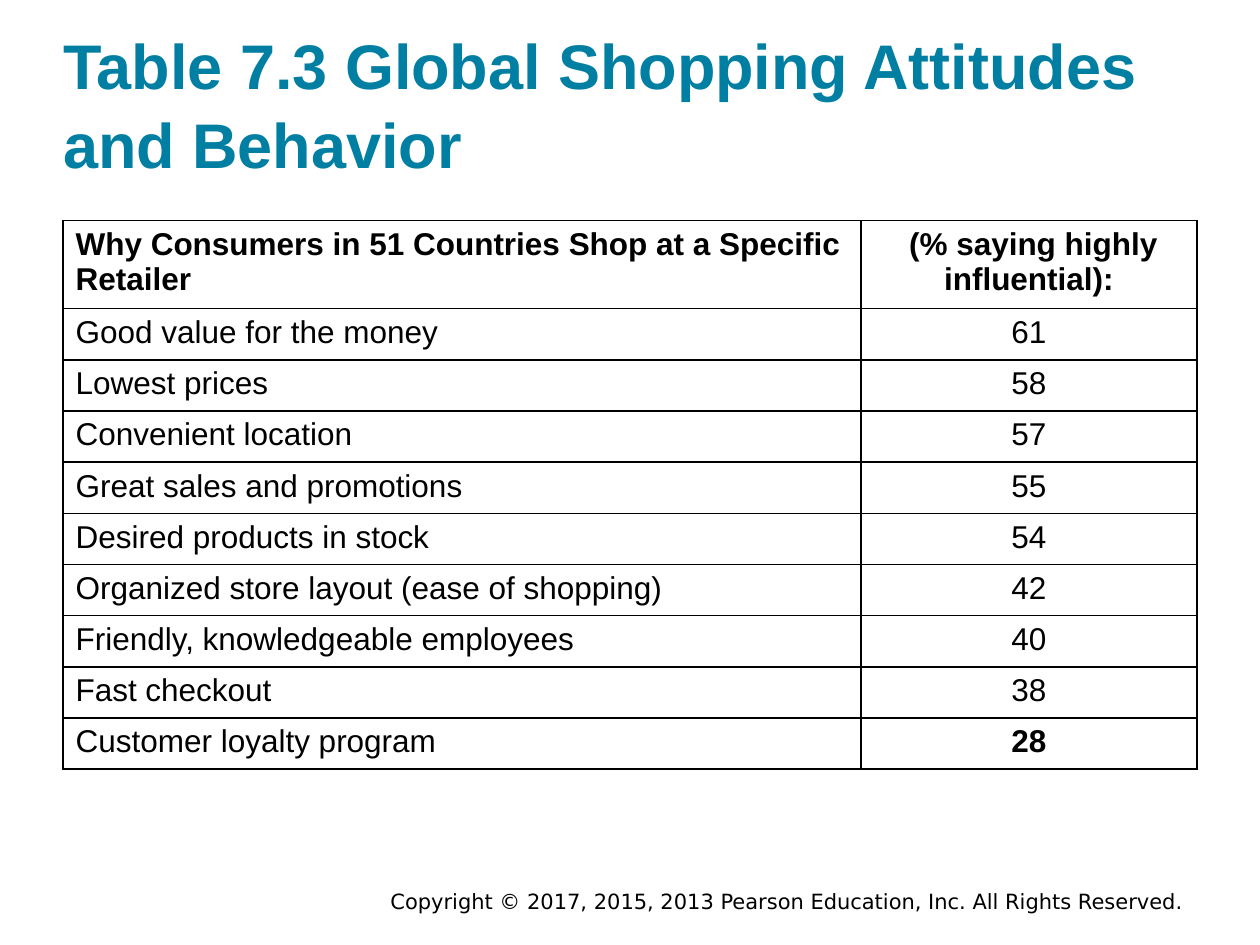
"""Build the slide on global shopping attitudes and behavior."""
from lxml import etree
from pptx import Presentation
from pptx.dml.color import RGBColor
from pptx.enum.text import MSO_ANCHOR, MSO_AUTO_SIZE, PP_ALIGN
from pptx.oxml.ns import qn
from pptx.util import Pt

BOTTOM = MSO_ANCHOR.BOTTOM
NO_FIT = MSO_AUTO_SIZE.NONE
LEFT, CENTER = PP_ALIGN.LEFT, PP_ALIGN.CENTER

TEAL = RGBColor(0x00, 0x7F, 0xA3)
BLACK = RGBColor(0x00, 0x00, 0x00)
WHITE = RGBColor(0xFF, 0xFF, 0xFF)

TITLE = "Table 7.3 Global Shopping Attitudes and Behavior"
COPYRIGHT = ("Copyright © 2017, 2015, 2013 Pearson Education, Inc. "
             "All Rights Reserved.")
HEADER = ("Why Consumers in 51 Countries Shop at a Specific Retailer",
          " (% saying highly influential):")
REASONS = [
    ("Good value for the money", "61"),
    ("Lowest prices", "58"),
    ("Convenient location", "57"),
    ("Great sales and promotions", "55"),
    ("Desired products in stock", "54"),
    ("Organized store layout (ease of shopping)", "42"),
    ("Friendly, knowledgeable employees", "40"),
    ("Fast checkout", "38"),
    ("Customer loyalty program", "28"),
]
COLUMN_WIDTHS = (456, 192)
HEADER_HEIGHT, ROW_HEIGHT = 47.5, 29.25

TITLE_FONT = {"name": "Arial", "size": Pt(36), "bold": True}
CELL_FONT = {"name": "Arial", "size": Pt(18), "bold": False}
BOLD_FONT = {**CELL_FONT, "bold": True}
FOOTER_FONT = {"name": "DejaVu Sans", "size": Pt(12), "bold": False}


def set_attrs(obj, values):
    """Set each named value on an object."""
    for name, value in values.items():
        setattr(obj, name, value)


def write(tf, text, font, color, align=LEFT):
    """Write one formatted paragraph into a text frame."""
    p = tf.paragraphs[0]
    p.alignment = align
    r = p.add_run()
    r.text = text
    set_attrs(r.font, font)
    r.font.color.rgb = color
    return p


def add_title(s):
    """Place and fill the title placeholder."""
    sp = s.shapes.title
    set_attrs(sp, {"left": Pt(36), "top": Pt(17.25),
                   "width": Pt(648), "height": Pt(86.5)})
    tf = sp.text_frame
    set_attrs(tf, {"margin_left": 0, "margin_top": 0, "margin_right": 0,
                   "margin_bottom": 0, "vertical_anchor": BOTTOM,
                   "word_wrap": True, "auto_size": NO_FIT})
    write(tf, TITLE, TITLE_FONT, TEAL).line_spacing = 1.05


def add_footer(s):
    """Add the copyright line."""
    tf = s.shapes.add_textbox(Pt(216), Pt(504), Pt(480), Pt(21.75)).text_frame
    tf.word_wrap = True
    write(tf, COPYRIGHT, FOOTER_FONT, BLACK)


def set_borders(cell):
    """Draw a thin line on all four sides of a cell."""
    tc_pr = cell._tc.get_or_add_tcPr()
    for i, side in enumerate(("a:lnL", "a:lnR", "a:lnT", "a:lnB")):
        ln = etree.Element(qn(side), w=str(Pt(1)))
        fill = etree.SubElement(ln, qn("a:solidFill"))
        etree.SubElement(fill, qn("a:srgbClr"), val=str(BLACK))
        tc_pr.insert(i, ln)


def fill_cell(cell, text, font, align):
    """Format one table cell."""
    write(cell.text_frame, text, font, BLACK, align)
    cell.fill.solid()
    cell.fill.fore_color.rgb = WHITE
    set_borders(cell)


def add_reasons_table(s):
    """Add the table of shopping reasons."""
    rows = [HEADER, *REASONS]
    height = HEADER_HEIGHT + ROW_HEIGHT * len(REASONS)
    table = s.shapes.add_table(len(rows), len(COLUMN_WIDTHS), Pt(36), Pt(126),
                               Pt(sum(COLUMN_WIDTHS)), Pt(height)).table
    table.horz_banding = False
    for column, width in zip(table.columns, COLUMN_WIDTHS):
        column.width = Pt(width)
    last = len(rows) - 1
    for i, row in enumerate(rows):
        table.rows[i].height = Pt(ROW_HEIGHT if i else HEADER_HEIGHT)
        for j, text in enumerate(row):
            bold = i == 0 or (i, j) == (last, 1)
            fill_cell(table.cell(i, j), text,
                      BOLD_FONT if bold else CELL_FONT, CENTER if j else LEFT)


def main():
    """Build and save the presentation."""
    prs = Presentation()
    prs.slide_width, prs.slide_height = Pt(720), Pt(540)
    s = prs.slides.add_slide(prs.slide_layouts[5])
    add_footer(s)
    add_title(s)
    add_reasons_table(s)
    prs.save("out.pptx")


if __name__ == "__main__":
    main()
